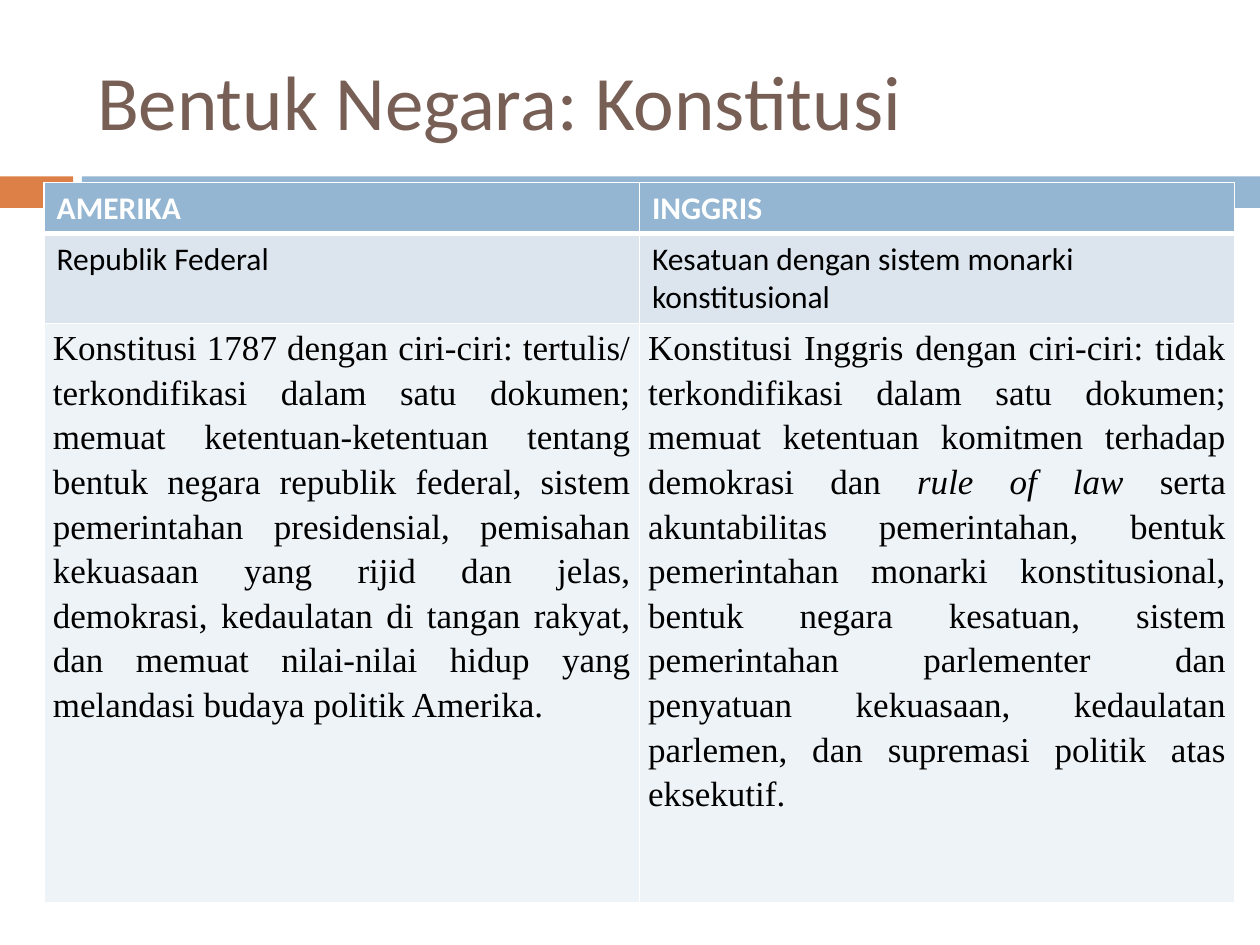
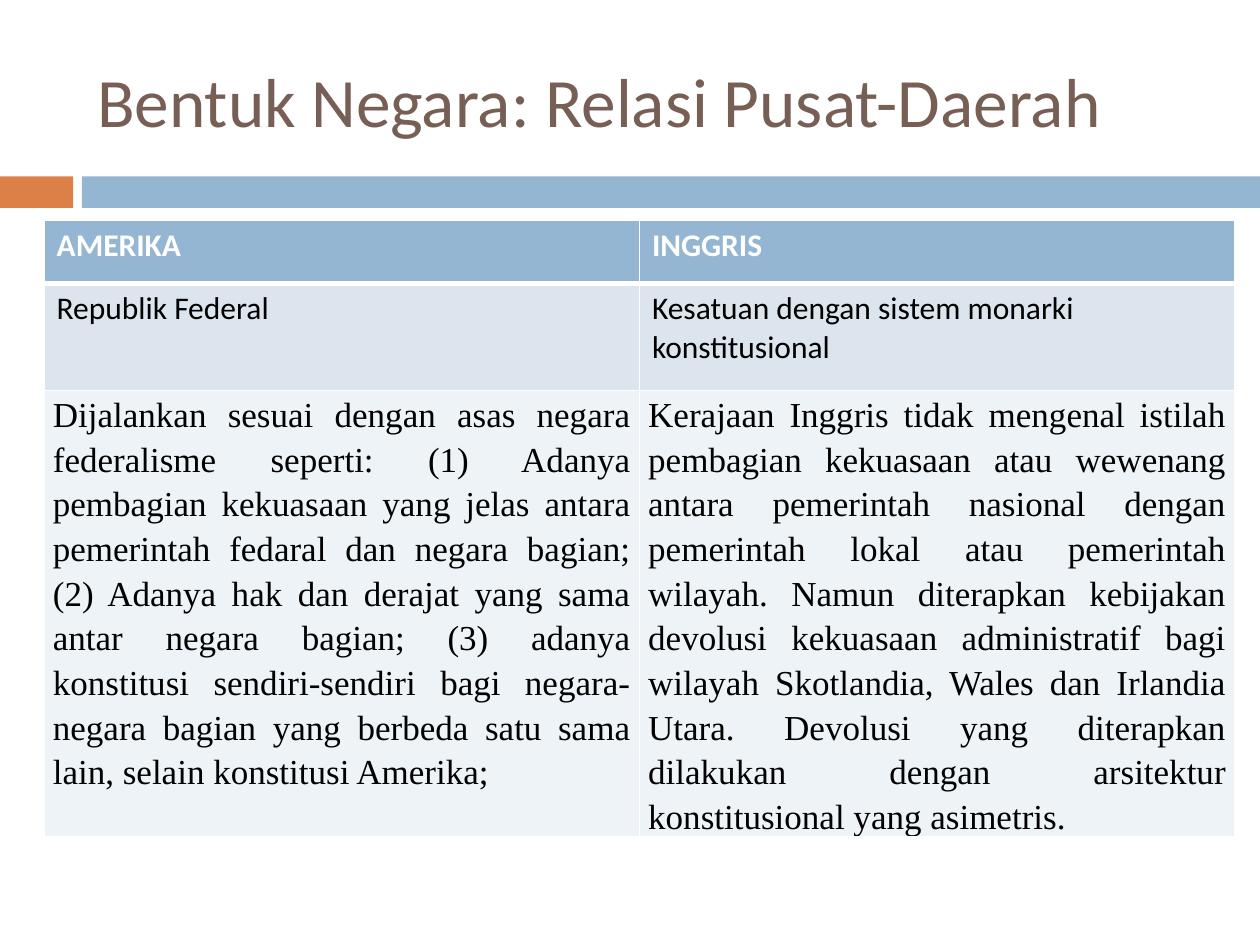
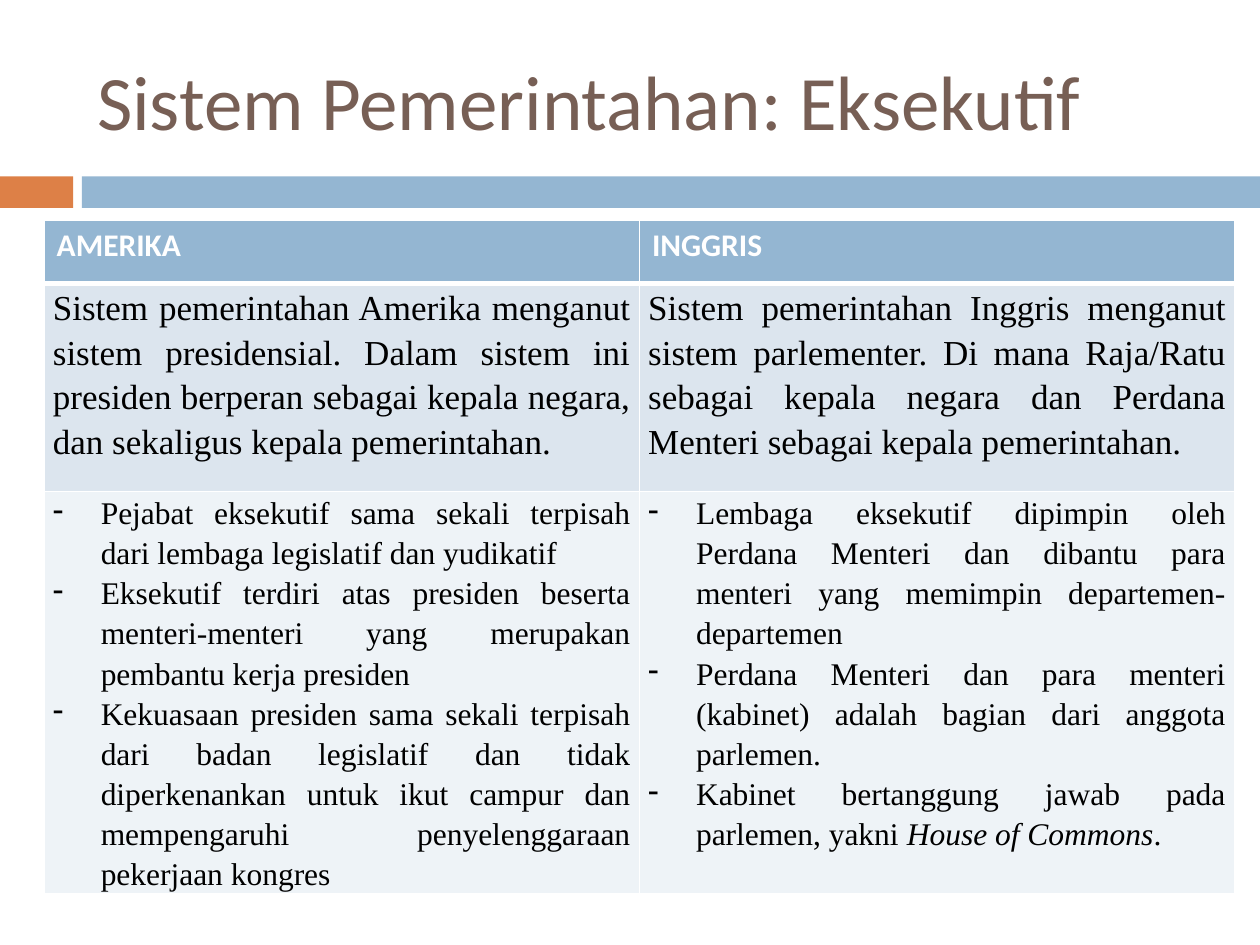
from lxml import etree
from pptx import Presentation
from pptx import util as u
from pptx.dml.color import RGBColor
from pptx.enum import shapes, text
from pptx.oxml.ns import qn

# Content: each row is (style, row height, (left cell, right cell)); *...* is italic
HEADS = ("AMERIKA", "INGGRIS")
FORMS = ("Republik Federal", "Kesatuan dengan sistem monarki konstitusional")
SLIDES = [
    {"title": "Bentuk Negara: Konstitusi", "size": 44, "top": 1.45, "rows": [
        ("head", 0.4, HEADS),
        ("label", 0.71, FORMS),
        ("prose", 4.6, (
            "Konstitusi 1787 dengan ciri-ciri: tertulis/ terkondifikasi dalam satu dokumen; "
            "memuat ketentuan-ketentuan tentang bentuk negara republik federal, sistem "
            "pemerintahan presidensial, pemisahan kekuasaan yang rijid dan jelas, demokrasi, "
            "kedaulatan di tangan rakyat, dan memuat nilai-nilai hidup yang melandasi budaya "
            "politik Amerika.",
            "Konstitusi Inggris dengan ciri-ciri: tidak terkondifikasi dalam satu dokumen; "
            "memuat ketentuan komitmen terhadap demokrasi dan *rule of law *serta "
            "akuntabilitas pemerintahan, bentuk pemerintahan monarki konstitusional, bentuk "
            "negara kesatuan, sistem pemerintahan parlementer dan penyatuan kekuasaan, "
            "kedaulatan parlemen, dan supremasi politik atas eksekutif.")),
    ]},
    {"title": "Bentuk Negara: Relasi Pusat-Daerah", "size": 39.6, "top": 1.75, "rows": [
        ("head", 0.5, HEADS),
        ("label", 0.85, FORMS),
        ("prose", 3.54, (
            "Dijalankan sesuai dengan asas negara federalisme seperti: (1) Adanya pembagian "
            "kekuasaan yang jelas antara pemerintah fedaral dan negara bagian; (2) Adanya hak "
            "dan derajat yang sama antar negara bagian; (3) adanya konstitusi sendiri-sendiri "
            "bagi negara-negara bagian yang berbeda satu sama lain, selain konstitusi Amerika;",
            "Kerajaan Inggris tidak mengenal istilah pembagian kekuasaan atau wewenang antara "
            "pemerintah nasional dengan pemerintah lokal atau pemerintah wilayah. Namun "
            "diterapkan kebijakan devolusi kekuasaan administratif bagi wilayah Skotlandia, "
            "Wales dan Irlandia Utara. Devolusi yang diterapkan dilakukan dengan arsitektur "
            "konstitusional yang asimetris.")),
    ]},
    {"title": "Sistem Pemerintahan: Eksekutif", "size": 44, "top": 1.75, "rows": [
        ("head", 0.5, HEADS),
        ("prose", 1.65, (
            "Sistem pemerintahan Amerika menganut sistem presidensial. Dalam sistem ini "
            "presiden berperan sebagai kepala negara, dan sekaligus kepala pemerintahan.",
            "Sistem pemerintahan Inggris menganut sistem parlementer. Di mana Raja/Ratu "
            "sebagai kepala negara dan Perdana Menteri sebagai kepala pemerintahan.")),
        ("list", 3.19, (
            ["Pejabat eksekutif sama sekali terpisah dari lembaga legislatif dan yudikatif",
             "Eksekutif terdiri atas presiden beserta menteri-menteri yang merupakan pembantu "
             "kerja presiden",
             "Kekuasaan presiden sama sekali terpisah dari badan legislatif dan tidak "
             "diperkenankan untuk ikut campur dan mempengaruhi penyelenggaraan pekerjaan "
             "kongres"],
            ["Lembaga eksekutif dipimpin oleh Perdana Menteri dan dibantu para menteri yang "
             "memimpin departemen-departemen",
             "Perdana Menteri dan para menteri (kabinet) adalah bagian dari anggota parlemen.",
             "Kabinet bertanggung jawab pada parlemen, yakni *House of Commons*."])),
    ]},
]

# Shared look
BROWN, ORANGE, BLUE, WHITE, BLACK = "775F55", "DD8047", "94B6D2", "FFFFFF", "000000"
ROW_FILLS = (BLUE, "DCE5EE", "EEF3F7")
BANDS = ((0, 0.58, ORANGE), (0.65, 9.35, BLUE))
BAND_TOP, BAND_HEIGHT = 1.4, 0.25
TITLE_BOX = {"left": 0.67, "top": 0.25, "width": 8.92, "height": 1.08}
TABLE_LEFT, TABLE_WIDTH = 0.35, 9.45
HANG = 0.38
SERIF = "Times New Roman"
FONTS = {
    "head": ({"name": "Calibri", "size": u.Pt(18), "bold": True}, WHITE),
    "label": ({"name": "Calibri", "size": u.Pt(18), "bold": False}, BLACK),
    "prose": ({"name": SERIF, "size": u.Pt(20), "bold": False}, BLACK),
    "list": ({"name": SERIF, "size": u.Pt(18), "bold": False}, BLACK),
}
JUSTIFIED = {"alignment": text.PP_ALIGN.JUSTIFY, "line_spacing": 1.15}
TIGHT = {"margin_left": u.Inches(0.07), "margin_right": u.Inches(0.07),
         "margin_top": 0, "margin_bottom": 0}


def rgb(color):
    return RGBColor.from_string(color)


def apply(target, values):
    for name, value in values.items():
        setattr(target, name, value)


def add_bands(page, layout):
    """Draw the two bands and move them to the layout, behind its placeholders."""
    for position, (left, width, color) in enumerate(BANDS, start=2):
        band = page.shapes.add_shape(
            shapes.MSO_SHAPE.RECTANGLE, u.Inches(left), u.Inches(BAND_TOP),
            u.Inches(width), u.Inches(BAND_HEIGHT))
        band.shadow.inherit = False
        band.fill.solid()
        band.fill.fore_color.rgb = rgb(color)
        band.line.fill.background()
        layout.element.cSld.spTree.insert(position, band.element)


def format_title(title, words, size):
    apply(title, {name: u.Inches(value) for name, value in TITLE_BOX.items()})
    title.text = words
    apply(title.text_frame, {"vertical_anchor": text.MSO_ANCHOR.MIDDLE, "word_wrap": True})
    para = title.text_frame.paragraphs[0]
    para.alignment = text.PP_ALIGN.LEFT
    font = para.runs[0].font
    apply(font, {"name": "Calibri", "size": u.Pt(size)})
    font.color.rgb = rgb(BROWN)


def add_borders(cell, row):
    """White rules, thicker between the heading row and the first body row."""
    widths = {"L": 1, "R": 1, "T": 3 if row == 1 else 1, "B": 3 if row == 0 else 1}
    props = cell._tc.get_or_add_tcPr()
    for side, width in widths.items():
        line = etree.SubElement(props, qn(f"a:ln{side}"), w=str(u.Pt(width)))
        fill = etree.SubElement(line, qn("a:solidFill"))
        etree.SubElement(fill, qn("a:srgbClr"), val=WHITE)


def add_dash(para):
    props = para._p.get_or_add_pPr()
    props.set("marL", str(u.Inches(HANG)))
    props.set("indent", str(-u.Inches(HANG)))
    etree.SubElement(props, qn("a:buChar"), char="-")


def fill_cell(cell, content, style):
    frame = cell.text_frame
    values, color = FONTS[style]
    if style in ("prose", "list"):
        apply(cell, TIGHT)
    for index, words in enumerate(content if style == "list" else [content]):
        para = frame.add_paragraph() if index else frame.paragraphs[0]
        if style == "list":
            add_dash(para)
        if style in ("prose", "list"):
            apply(para, JUSTIFIED)
        for part, piece in enumerate(words.split("*")):
            span = para.add_run()
            span.text = piece
            apply(span.font, {**values, "italic": part % 2 == 1})
            span.font.color.rgb = rgb(color)


def add_comparison(page, top, rows):
    height = sum(row_height for _, row_height, _ in rows)
    table = page.shapes.add_table(
        len(rows), len(HEADS), u.Inches(TABLE_LEFT), u.Inches(top),
        u.Inches(TABLE_WIDTH), u.Inches(height)).table
    for row, (style, row_height, contents) in enumerate(rows):
        table.rows[row].height = u.Inches(row_height)
        for column, content in enumerate(contents):
            cell = table.cell(row, column)
            add_borders(cell, row)
            cell.fill.solid()
            cell.fill.fore_color.rgb = rgb(ROW_FILLS[row])
            fill_cell(cell, content, style)


def main():
    deck = Presentation()
    deck.slide_width, deck.slide_height = u.Inches(10), u.Inches(7.5)
    layout = deck.slide_layouts[5]
    for number, content in enumerate(SLIDES):
        page = deck.slides.add_slide(layout)
        if number == 0:
            add_bands(page, layout)
        format_title(page.shapes.title, content["title"], content["size"])
        add_comparison(page, content["top"], content["rows"])
    deck.save("out.pptx")


if __name__ == "__main__":
    main()
